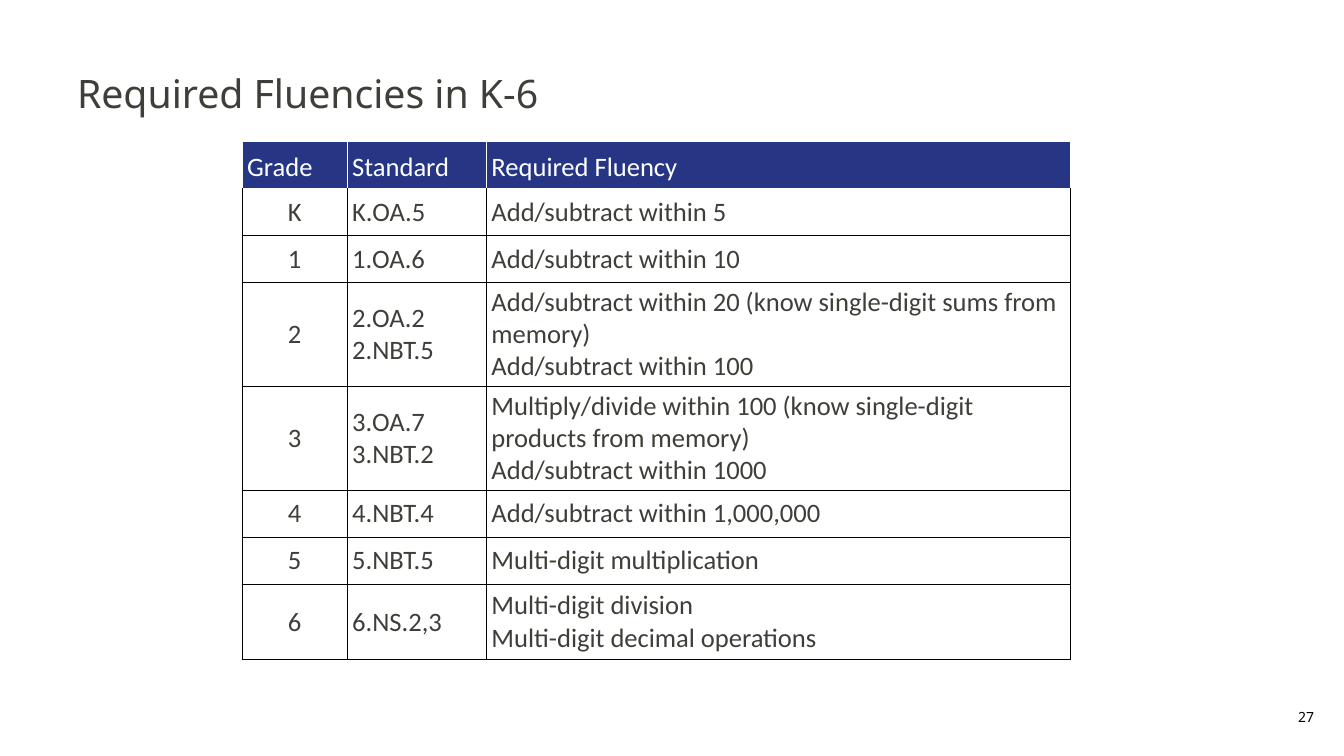
from dataclasses import dataclass

from lxml import etree
from pptx import Presentation
from pptx import util as u
from pptx.dml.color import RGBColor
from pptx.enum import text
from pptx.oxml.ns import qn


@dataclass(frozen=True)
class Theme:
    navy: str = "263685"
    ink: str = "3F3F39"
    black: str = "000000"
    white: str = "FFFFFF"
    heading_font: str = "Noto Sans"
    table_font: str = "Calibri"
    title_size: int = 28
    table_size: int = 19
    number_size: int = 10


theme = Theme()
LEFT, CENTER, RIGHT = text.PP_ALIGN.LEFT, text.PP_ALIGN.CENTER, text.PP_ALIGN.RIGHT
MIDDLE = text.MSO_ANCHOR.MIDDLE


def write(tf, lines, font, size, color, align=LEFT, spacing=1.0):
    """Fill a text frame with one paragraph per line, all in one style."""
    tf.word_wrap = True
    tf.text = lines
    for p in tf.paragraphs:
        p.alignment = align
        p.line_spacing = spacing
        p.font.name = font
        p.font.size = u.Pt(size)
        p.font.color.rgb = RGBColor.from_string(color)


def add_borders(cell, colors):
    """Draw 1 pt cell borders; colors maps a side (L, R, T, B) to a colour."""
    props = cell._tc.get_or_add_tcPr()
    for side, color in colors.items():
        line = etree.SubElement(props, qn(f"a:ln{side}"), w=str(u.Pt(1)))
        fill = etree.SubElement(line, qn("a:solidFill"))
        etree.SubElement(fill, qn("a:srgbClr"), val=color)


prs = Presentation()
prs.slide_width, prs.slide_height = u.Pt(960), u.Pt(540)
s = prs.slides.add_slide(prs.slide_layouts[6])

# Title and slide number
title = s.shapes.add_textbox(u.Pt(48), u.Pt(21.6), u.Pt(864), u.Pt(90))
write(title.text_frame, "Required Fluencies in K-6",
      theme.heading_font, theme.title_size, theme.ink)
title.text_frame.vertical_anchor = MIDDLE

number = s.shapes.add_textbox(u.Pt(795), u.Pt(502.5), u.Pt(153.3), u.Pt(19.5))
write(number.text_frame, "27 ",
      theme.heading_font, theme.number_size, theme.black, RIGHT)

# Fluency table
rows = [
    ("Grade", "Standard", "Required Fluency"),
    ("K", "K.OA.5", "Add/subtract within 5"),
    ("1", "1.OA.6", "Add/subtract within 10"),
    ("2", "2.OA.2\n2.NBT.5",
     "Add/subtract within 20 (know single-digit sums from memory)\n"
     "Add/subtract within 100"),
    ("3", "3.OA.7\n3.NBT.2",
     "Multiply/divide within 100 (know single-digit products from memory)\n"
     "Add/subtract within 1000"),
    ("4", "4.NBT.4", "Add/subtract within 1,000,000"),
    ("5", "5.NBT.5", "Multi-digit multiplication"),
    ("6", "6.NS.2,3", "Multi-digit division\nMulti-digit decimal operations"),
]
widths = [75, 99.5, 417]
heights = [33.6, 33.6, 33.6, 74.2, 74.2, 33.6, 33.6, 54]

table = s.shapes.add_table(len(rows), len(widths), u.Pt(173), u.Pt(101),
                           u.Pt(sum(widths)), u.Pt(sum(heights))).table
table.first_row = table.horz_banding = False
for column, width in zip(table.columns, widths):
    column.width = u.Pt(width)

for i, (row, height) in enumerate(zip(rows, heights)):
    table.rows[i].height = u.Pt(height)
    header = i == 0
    for j, value in enumerate(row):
        cell = table.cell(i, j)
        cell.margin_left = cell.margin_right = u.Pt(3.6)
        cell.margin_top = cell.margin_bottom = 0
        cell.vertical_anchor = MIDDLE
        write(cell.text_frame, value, theme.table_font, theme.table_size,
              theme.white if header else theme.ink,
              CENTER if j == 0 and not header else LEFT,
              1.15 if header else 1.0)
        side = theme.white if header else theme.black
        top = theme.white if i <= 1 else theme.black
        add_borders(cell, {"L": side, "R": side, "T": top, "B": side})
        if header:
            cell.fill.solid()
            cell.fill.fore_color.rgb = RGBColor.from_string(theme.navy)
        else:
            cell.fill.background()

prs.save("out.pptx")
